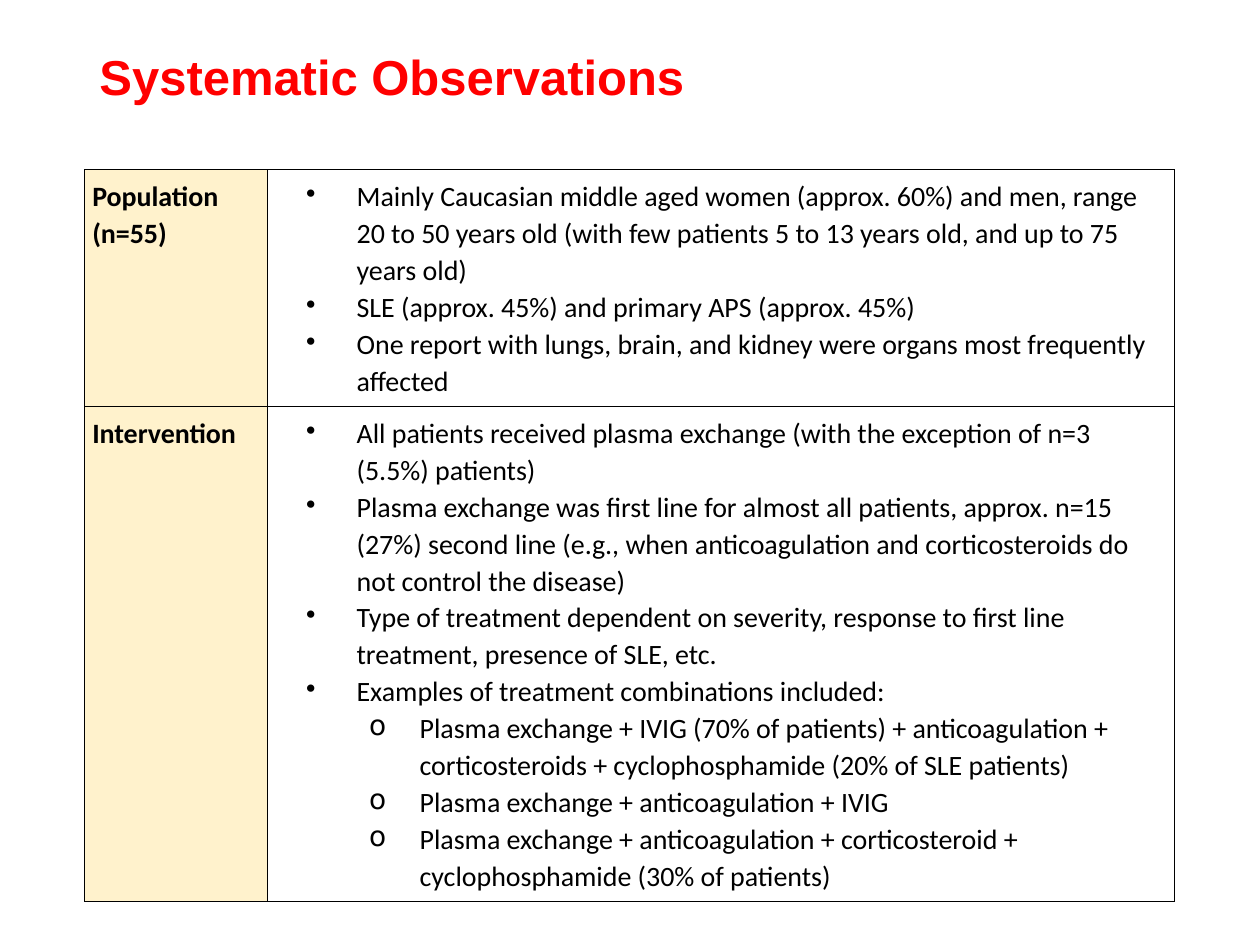
from dataclasses import dataclass

from lxml import etree
from pptx import Presentation
from pptx.dml.color import RGBColor
from pptx.enum.text import MSO_ANCHOR, PP_ALIGN
from pptx.oxml.ns import qn
from pptx.table import _Cell
from pptx.text.text import _Paragraph
from pptx.util import Cm, Pt

LEFT = PP_ALIGN.LEFT
TOP = MSO_ANCHOR.TOP
MIDDLE = MSO_ANCHOR.MIDDLE

RED = RGBColor(0xFF, 0x00, 0x00)
BLACK = RGBColor(0x00, 0x00, 0x00)
CREAM = RGBColor(0xFF, 0xF2, 0xCC)

TITLE_ONLY = 5
CELL_MARGIN = Cm(0.15)
HANGING = Cm(1.02)
BULLETS = ("•", "o")
INDENTS = (Cm(1.65), Cm(2.92))


@dataclass
class Item:
    text: str
    level: int = 0


@dataclass
class Topic:
    heading: str
    height: Cm
    items: list[Item]


TOPICS = [
    Topic("Population (n=55)", Cm(4.42), [
        Item("Mainly Caucasian middle aged women (approx. 60%) and men, range "
             "20 to 50 years old (with few patients 5 to 13 years old, and up to "
             "75 years old)"),
        Item("SLE (approx. 45%) and primary APS (approx. 45%)"),
        Item("One report with lungs, brain, and kidney were organs most "
             "frequently affected"),
    ]),
    Topic("Intervention", Cm(9.73), [
        Item("All patients received plasma exchange (with the exception of n=3 "
             "(5.5%) patients)"),
        Item("Plasma exchange was first line for almost all patients, approx. "
             "n=15 (27%) second line (e.g., when anticoagulation and "
             "corticosteroids do not control the disease)"),
        Item("Type of treatment dependent on severity, response to first line "
             "treatment, presence of SLE, etc."),
        Item("Examples of treatment combinations included:"),
        Item("Plasma exchange + IVIG (70% of patients) + anticoagulation + "
             "corticosteroids + cyclophosphamide (20% of SLE patients)", 1),
        Item("Plasma exchange + anticoagulation + IVIG", 1),
        Item("Plasma exchange + anticoagulation + corticosteroid + "
             "cyclophosphamide (30% of patients)", 1),
    ]),
]


def write(para: _Paragraph, text: str, *, font: str = "Calibri", size: int = 16,
          color: RGBColor = BLACK, bold: bool = False, spacing: float = 1.08) -> None:
    para.alignment = LEFT
    para.line_spacing = spacing
    span = para.add_run()
    span.text = text
    span.font.name = font
    span.font.size = Pt(size)
    span.font.bold = bold
    span.font.color.rgb = color


def add_bullet(para: _Paragraph, level: int) -> None:
    properties = para._p.get_or_add_pPr()
    properties.set("marL", str(INDENTS[level]))
    properties.set("indent", str(-HANGING))
    etree.SubElement(properties, qn("a:buChar")).set("char", BULLETS[level])


def frame_cell(cell: _Cell) -> None:
    cell.margin_left = cell.margin_right = CELL_MARGIN
    cell.margin_top = cell.margin_bottom = CELL_MARGIN
    cell.vertical_anchor = TOP
    properties = cell._tc.get_or_add_tcPr()
    for side in ("a:lnL", "a:lnR", "a:lnT", "a:lnB"):
        line = etree.SubElement(properties, qn(side), w=str(Pt(0.5)))
        paint = etree.SubElement(line, qn("a:solidFill"))
        etree.SubElement(paint, qn("a:srgbClr"), val=str(BLACK))


def fill_heading(cell: _Cell, heading: str) -> None:
    frame_cell(cell)
    cell.fill.solid()
    cell.fill.fore_color.rgb = CREAM
    write(cell.text_frame.paragraphs[0], heading, bold=True)


def fill_list(cell: _Cell, items: list[Item]) -> None:
    frame_cell(cell)
    cell.fill.background()
    frame = cell.text_frame
    for index, item in enumerate(items):
        para = frame.add_paragraph() if index else frame.paragraphs[0]
        write(para, item.text)
        add_bullet(para, item.level)


def main() -> None:
    deck = Presentation()
    deck.slide_width, deck.slide_height = Cm(25.4), Cm(19.05)
    page = deck.slides.add_slide(deck.slide_layouts[TITLE_ONLY])

    # Title
    title = page.shapes.title
    title.left, title.top = Cm(1.75), Cm(0.3)
    title.width, title.height = Cm(21.9), Cm(2.6)
    title.text_frame.vertical_anchor = MIDDLE
    write(title.text_frame.paragraphs[0], "Systematic Observations",
          font="Arial", size=28, color=RED, bold=True, spacing=0.9)

    # Table of observations, one row per topic
    widths = (Cm(3.68), Cm(18.29))
    height = sum(topic.height for topic in TOPICS)
    table = page.shapes.add_table(len(TOPICS), len(widths), Cm(1.71), Cm(3.42),
                                  sum(widths), height).table
    table.first_row = table.horz_banding = False
    for column, width in zip(table.columns, widths):
        column.width = width
    for row, topic in zip(table.rows, TOPICS):
        row.height = topic.height
        fill_heading(row.cells[0], topic.heading)
        fill_list(row.cells[1], topic.items)

    deck.save("out.pptx")


if __name__ == "__main__":
    main()
